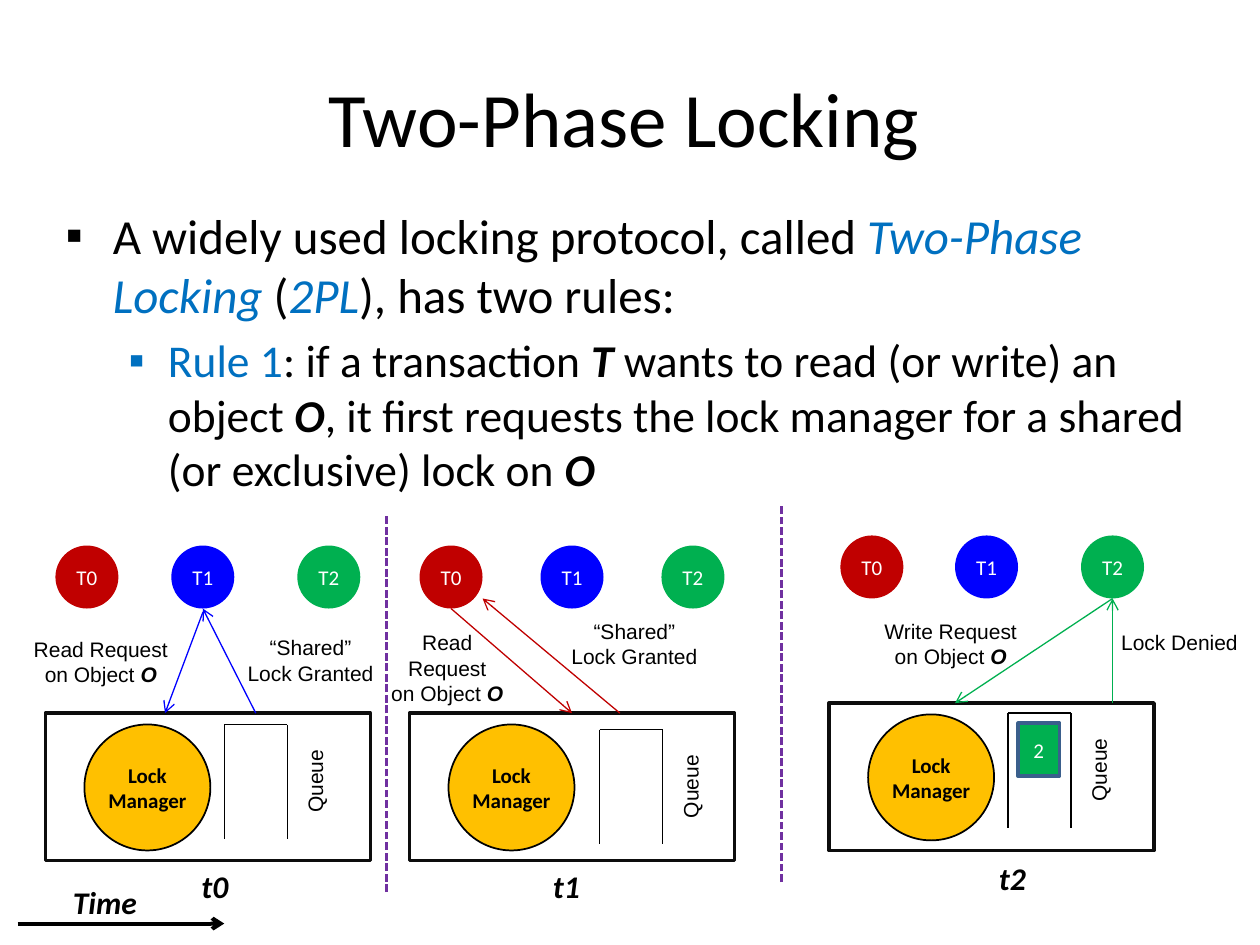
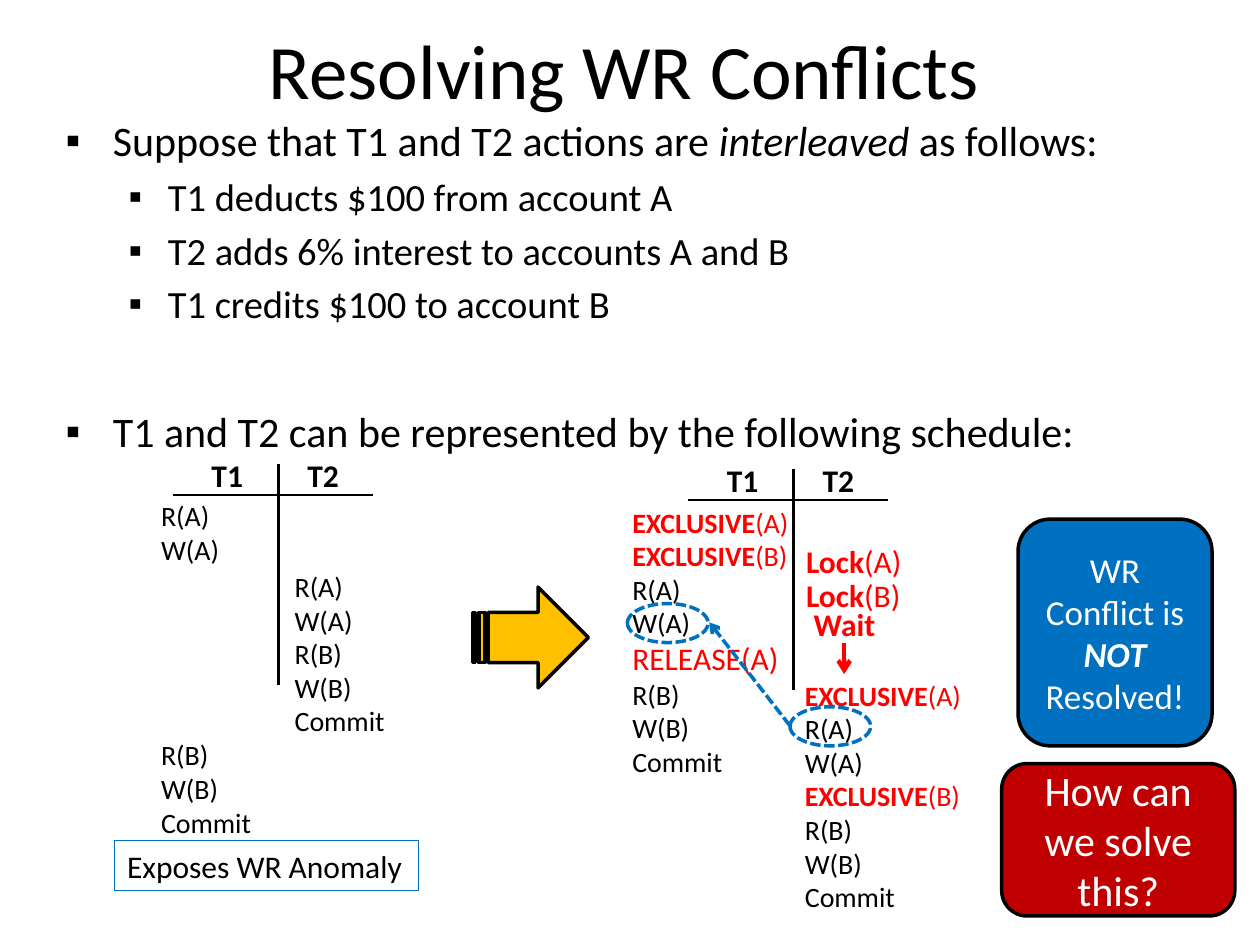
"""Builds two slides on two-phase locking and WR conflicts."""
from lxml.etree import SubElement
from pptx import Presentation
from pptx.dml.color import RGBColor
from pptx.enum.dml import MSO_LINE
from pptx.enum.shapes import MSO_CONNECTOR, MSO_SHAPE
from pptx.enum.text import MSO_ANCHOR, MSO_AUTO_SIZE, PP_ALIGN
from pptx.oxml.ns import qn
from pptx.util import Inches, Pt

BLACK = RGBColor(0, 0, 0)
WHITE = RGBColor(0xFF, 0xFF, 0xFF)
SKY = RGBColor(0x00, 0x70, 0xC0)
BLUE = RGBColor(0x00, 0x00, 0xFF)
RED = RGBColor(0xFF, 0x00, 0x00)
WINE = RGBColor(0xC0, 0x00, 0x00)
GREEN = RGBColor(0x00, 0xB0, 0x50)
GOLD = RGBColor(0xFF, 0xC0, 0x00)
INK = RGBColor(0x0D, 0x0D, 0x0D)
STEEL = RGBColor(0x3A, 0x5F, 0x8C)
PLUM = RGBColor(0x70, 0x30, 0xA0)

ROW = 16 * 1.22 / 72
FRAME_W, FRAME_H = 2.58, 1.17
LEFT, MID = PP_ALIGN.LEFT, PP_ALIGN.CENTER

OBJ = ("O", "bi")
LOCKING = {
    "title": "Two-Phase Locking", "top": 0.3, "body_top": 1.58,
    "body": [
        (0, 28, 0, ["A widely used locking protocol, called ",
                    ("Two-Phase Locking", "i", SKY), " (", ("2PL", "i", SKY),
                    "), has two rules:"]),
        (1, 26, 0, [("Rule 1", "", SKY), ": if a transaction ", ("T", "bi"),
                    " wants to read (or write) an object ", OBJ,
                    ", it first requests the lock manager for a shared "
                    "(or exclusive) lock on ", OBJ]),
    ],
}
CONFLICTS = {
    "title": "Resolving WR Conflicts", "top": -0.08, "body_top": 0.86,
    "body": [
        (0, 24, 0, ["Suppose that T1 and T2 actions are ",
                    ("interleaved", "i"), " as follows:"]),
        (1, 22, 0, "T1 deducts $100 from account A"),
        (1, 22, 0, "T2 adds 6% interest to accounts A and B"),
        (1, 22, 0, "T1 credits $100 to account B"),
        (0, 24, 45, "T1 and T2 can be represented by the following schedule:"),
    ],
}

GRANT = ["“Shared”", "Lock Granted"]
SCENES = [
    {"frame": (0.36, 5.66), "nodes": (0.44, 1.36, 2.36), "queue": (1.42, 0.09),
     "tone": BLUE, "arrows": [(1.61, 4.86, 1.31, 5.66), (2.03, 5.66, 1.61, 4.83)],
     "notes": [(0.14, 5, 1.32, 0.5, MID, [["Read Request\non Object ", OBJ]]),
               (1.86, 4.99, 1.21, 0.5, MID, GRANT)],
     "time": ("t0", 1.5, 6.83)},
    {"frame": (3.25, 5.66), "nodes": (3.33, 4.29, 5.25), "queue": (1.51, 0.13),
     "tone": WINE, "arrows": [(3.58, 4.83, 4.54, 5.66), (4.92, 5.66, 3.83, 4.75)],
     "notes": [(3, 4.95, 1.1, 0.71, MID, [["Read\nRequest\non Object ", OBJ]]),
               (4.43, 4.86, 1.21, 0.5, MID, GRANT)],
     "time": ("t1", 4.29, 6.83)},
    {"frame": (6.58, 5.58), "nodes": (6.67, 7.58, 8.58), "queue": (1.42, 0.08),
     "tone": GREEN, "arrows": [(8.83, 4.75, 7.58, 5.58), (8.83, 5.58, 8.83, 4.75)],
     "notes": [(6.89, 4.86, 1.31, 0.5, MID, [["Write Request\non Object ", OBJ]]),
               (8.8, 4.95, 1.13, 0.3, LEFT, ["Lock Denied"])],
     "time": ("t2", 7.83, 6.77)},
]


def red(word, arg, size=None):
    """Return a bold red word with its plain red argument."""
    return [(word, "b", RED, size), (arg, "", RED, size)]


CROSSES = [(2.21, 3.68), (6.3, 3.72)]
COLUMNS = [
    (1.18, 3.91, 0, 0.92, ["R(A)", "W(A)"]),
    (1.18, 3.91, 7, 0.92, ["R(B)", "W(B)", "Commit"]),
    (2.24, 3.93, 2, 0.92, ["R(A)", "W(A)", "R(B)", "W(B)", "Commit"]),
    (4.92, 3.96, 0, 1.46, [red("EXCLUSIVE", "(A)"), red("EXCLUSIVE", "(B)"),
                           "R(A)", "W(A)", [("RELEASE(A)", "", RED, 18)],
                           "R(B)", "W(B)", "Commit"]),
    (6.29, 4.25, 4, 1.46, [red("EXCLUSIVE", "(A)"), "R(A)", "W(A)",
                           red("EXCLUSIVE", "(B)"), "R(B)", "W(B)", "Commit"]),
]
WAITS = [(6.3, 4.25, 0.96, red("Lock", "(A)")), (6.3, 4.52, 0.96, red("Lock", "(B)")),
         (6.36, 4.75, 0.7, [("Wait", "b", RED)])]
RINGS = [(6.27, 5.61), (4.98, 4.79)]
CARDS = [
    (8.08, 4.12, 1.54, 1.8, SKY, 20, ["WR Conflict is ", ("NOT", "bi"), " Resolved!"]),
    (7.95, 6.06, 1.85, 1.21, WINE, 24, "How can we solve this?"),
]


def write(para, runs, size, color=BLACK, face="Calibri", style="", align=None):
    """Fill one paragraph with runs."""
    font = para.font
    font.size, font.name = Pt(size), face
    font.color.rgb = color
    if style:
        font.bold, font.italic = "b" in style, "i" in style
    if align is not None:
        para.alignment = align
    for item in [runs] if isinstance(runs, str) else runs:
        item = (item,) if isinstance(item, str) else item
        words, look, tone, pts = (item + ("", None, None)[len(item) - 1:])[:4]
        for num, part in enumerate(words.split("\n")):
            if num:
                para.add_line_break()
            run = para.add_run()
            run.text = part
            if look:
                run.font.bold, run.font.italic = "b" in look, "i" in look
            if tone is not None:
                run.font.color.rgb = tone
            if pts:
                run.font.size = Pt(pts)


def fill(frame, lines, size, **look):
    """Write each line as a paragraph of a text frame."""
    for num, line in enumerate(lines):
        para = frame.add_paragraph() if num else frame.paragraphs[0]
        write(para, line, size, **look)


def label(slide, x, y, w, h, lines, size, **look):
    """Add a text box that fits its text."""
    box = slide.shapes.add_textbox(Inches(x), Inches(y), Inches(w), Inches(h))
    box.text_frame.word_wrap = False
    box.text_frame.auto_size = MSO_AUTO_SIZE.SHAPE_TO_FIT_TEXT
    fill(box.text_frame, lines, size, **look)
    return box


def shape(slide, kind, x, y, w, h, tint=None, edge=None, width=2):
    """Add a flat preset shape."""
    item = slide.shapes.add_shape(kind, Inches(x), Inches(y), Inches(w), Inches(h))
    item.shadow.inherit = False
    if tint is None:
        item.fill.background()
    else:
        item.fill.solid()
        item.fill.fore_color.rgb = tint
    if edge is None:
        item.line.fill.background()
    else:
        item.line.color.rgb = edge
        item.line.width = Pt(width)
    return item


def inside(item, text, size, side=0.0, **look):
    """Centre text in a shape."""
    frame = item.text_frame
    frame.word_wrap = True
    frame.vertical_anchor = MSO_ANCHOR.MIDDLE
    frame.margin_left = frame.margin_right = Inches(side)
    fill(frame, [text], size, align=MID, **look)


def line(slide, x1, y1, x2, y2, color=BLACK, width=0.75, dash=False, arrow=False):
    """Add a straight line, dashed or with an arrowhead if asked."""
    item = slide.shapes.add_connector(
        MSO_CONNECTOR.STRAIGHT, Inches(x1), Inches(y1), Inches(x2), Inches(y2))
    item.line.color.rgb = color
    item.line.width = Pt(width)
    if dash:
        item.line.dash_style = MSO_LINE.SQUARE_DOT
    if arrow:
        SubElement(item.line._get_or_add_ln(), qn("a:tailEnd"), type="arrow")
    SubElement(item._element.spPr, qn("a:effectLst"))
    return item


def start(deck, page):
    """Add a slide with its title and bullet list."""
    slide = deck.slides.add_slide(deck.slide_layouts[1])
    title, body = slide.placeholders
    for item, x, y, w, h in ((title, 0.08, page["top"], 9.75, 1.25),
                             (body, 0.42, page["body_top"], 9.45, 5.75)):
        item.left, item.top = Inches(x), Inches(y)
        item.width, item.height = Inches(w), Inches(h)
        item.text_frame.auto_size = MSO_AUTO_SIZE.NONE
    fill(title.text_frame, [page["title"]], 44)
    for num, (level, size, gap, runs) in enumerate(page["body"]):
        frame = body.text_frame
        para = frame.add_paragraph() if num else frame.paragraphs[0]
        para.level = level
        if gap:
            para.space_before = Pt(gap)
        props = para._p.get_or_add_pPr()
        SubElement(props, qn("a:buFont"), typeface="Arial")
        SubElement(props, qn("a:buChar"), char="▪")
        write(para, runs, size)
    return slide


def scene(slide, data):
    """Draw one moment of the lock manager."""
    x, y = data["frame"]
    for num, (left, tint) in enumerate(zip(data["nodes"], (WINE, BLUE, GREEN))):
        node = shape(slide, MSO_SHAPE.OVAL, left, y - 1.33, 0.5, 0.5, tint)
        inside(node, f"T{num}", 12, color=WHITE)
    boss = shape(slide, MSO_SHAPE.OVAL, x + 0.31, y + 0.09, 1, 1, GOLD, BLACK, 1)
    inside(boss, "Lock Manager", 12, style="b")
    qx, qy = x + data["queue"][0], y + data["queue"][1]
    for ends in ((qx, qy, qx, qy + 0.91), (qx, qy, qx + 0.5, qy),
                 (qx + 0.5, qy, qx + 0.5, qy + 0.91)):
        line(slide, *ends)
    frame = shape(slide, MSO_SHAPE.RECTANGLE, x, y, FRAME_W, FRAME_H, edge=INK)
    name = label(slide, qx + 0.37, qy + 0.3, 0.7, 0.3, ["Queue"], 12, face="Arial")
    name.rotation = 270
    for left, top, w, h, align, lines in data["notes"]:
        label(slide, left, top, w, h, lines, 12, face="Arial", align=align)
    for ends in data["arrows"]:
        link = line(slide, *ends, data["tone"], arrow=True)
        if abs(ends[2] - x - FRAME_W / 2) < 0.01:
            link.end_connect(frame, 0)
    text, left, top = data["time"]
    label(slide, left, top, 0.41, 0.4, [text], 18, style="bi")


def locking(deck):
    """Build the locking slide."""
    slide = start(deck, LOCKING)
    for data in SCENES:
        scene(slide, data)
    token = shape(slide, MSO_SHAPE.RECTANGLE, 8.08, 5.74, 0.33, 0.42, GREEN, STEEL)
    inside(token, "2", 12, 0.1, color=WHITE)
    for x, y in ((3.07, 4.08), (6.2, 4)):
        line(slide, x, y + 3, x, y, PLUM, 1.5, dash=True)
    line(slide, 0.14, 7.33, 1.78, 7.33, width=2.25, arrow=True)
    label(slide, 0.48, 6.96, 0.72, 0.4, ["Time"], 18, style="bi")


def conflicts(deck):
    """Build the conflicts slide."""
    slide = start(deck, CONFLICTS)
    for x, y in CROSSES:
        line(slide, x, y, x, y + 1.76, width=1.5)
        line(slide, x - 0.84, y + 0.25, x + 0.75, y + 0.25, width=1.5)
        for name, gap in (("T1", -0.63), ("T2", 0.13)):
            label(slide, x + gap, y - 0.11, 0.45, 0.4, [name], 18, style="b")
    for x, y, skip, w, rows in COLUMNS:
        label(slide, x, y + skip * ROW, w, len(rows) * ROW + 0.1, rows, 16)
    for x, y, w, runs in WAITS:
        label(slide, x, y, w, 0.4, [runs], 18)
    note = label(slide, 0.91, 6.67, 2.41, 0.4, ["Exposes WR Anomaly"], 18)
    note.line.color.rgb = SKY
    note.line.width = Pt(0.75)
    shape(slide, MSO_SHAPE.STRIPED_RIGHT_ARROW, 3.75, 4.66, 0.92, 0.8, GOLD, BLACK)
    line(slide, 6.7, 5.1, 6.7, 5.35, RED, 2.5, arrow=True)
    for x, y in RINGS:
        ring = shape(slide, MSO_SHAPE.OVAL, x, y, 0.64, 0.31, edge=SKY)
        ring.line.dash_style = MSO_LINE.SQUARE_DOT
    line(slide, 6.27, 5.76, 5.63, 4.94, SKY, 2, dash=True, arrow=True)
    for x, y, w, h, tint, size, text in CARDS:
        card = shape(slide, MSO_SHAPE.ROUNDED_RECTANGLE, x, y, w, h, tint, BLACK)
        inside(card, text, size, 0.1, color=WHITE)


def main():
    """Build and save the deck."""
    deck = Presentation()
    deck.slide_width, deck.slide_height = Inches(10), Inches(7.5)
    locking(deck)
    conflicts(deck)
    deck.save("out.pptx")


if __name__ == "__main__":
    main()
